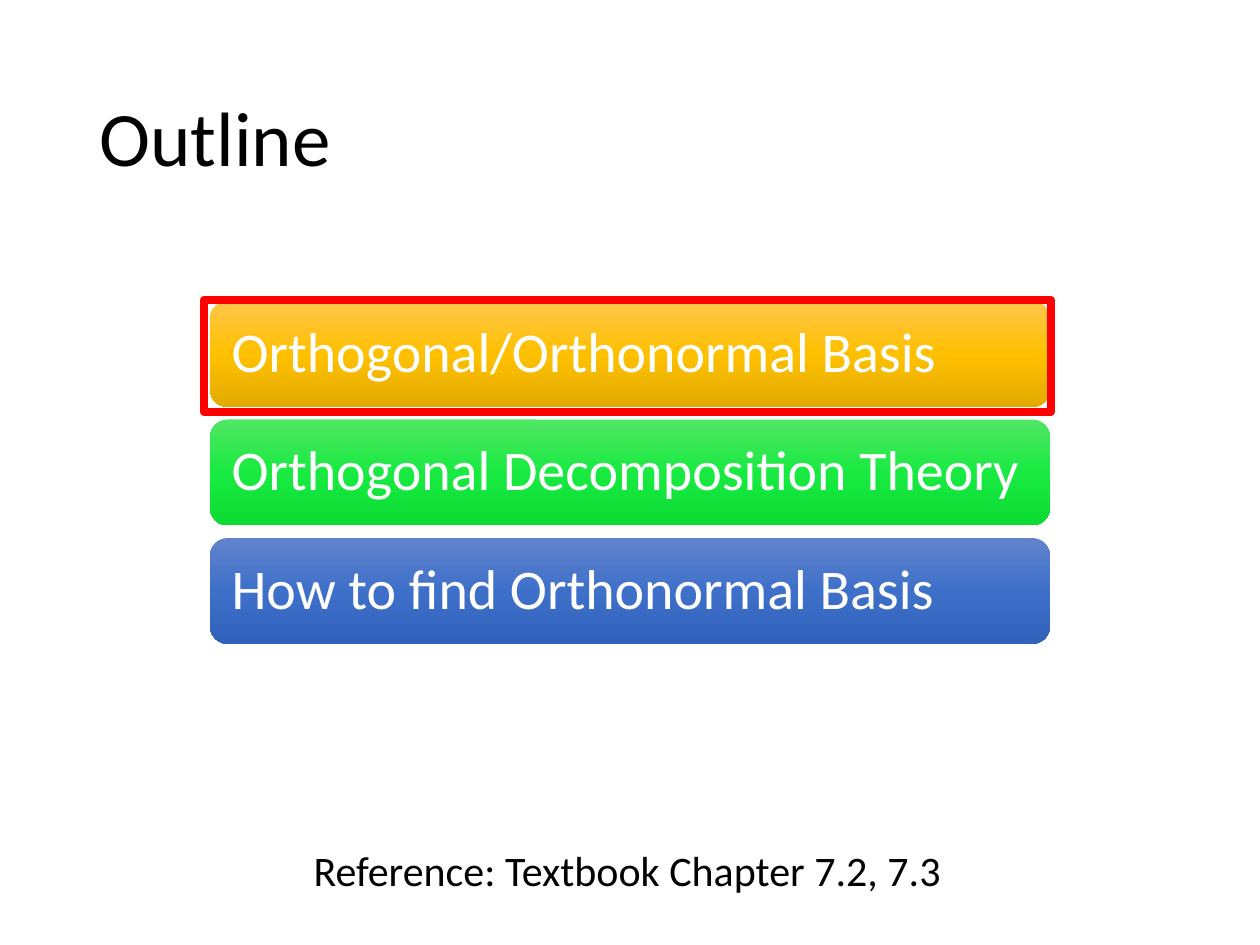
from copy import deepcopy

from pptx import Presentation
from pptx.dml.color import RGBColor
from pptx.enum.shapes import MSO_SHAPE
from pptx.enum.text import MSO_ANCHOR, PP_ALIGN
from pptx.oxml.ns import qn
from pptx.util import Inches, Pt

ROUNDED, RECTANGLE = MSO_SHAPE.ROUNDED_RECTANGLE, MSO_SHAPE.RECTANGLE
TOP, MIDDLE = MSO_ANCHOR.TOP, MSO_ANCHOR.MIDDLE
LEFT = PP_ALIGN.LEFT

TITLE = "Outline"
REFERENCE = "Reference: Textbook Chapter 7.2, 7.3"
TOPICS = [  # wording, gradient from top to bottom
    ("Orthogonal/Orthonormal Basis", ("FFC64B", "FFC000", "E3AB00")),
    ("Orthogonal Decomposition Theory", ("51E663", "19EA42", "0CDB34")),
    ("How to find Orthonormal Basis", ("6183CB", "3E70CA", "3062BB")),
]

THEME = {
    "font": "Calibri",
    "title": {"size": 44, "color": "000000"},
    "topic": {"size": 32, "color": "FFFFFF"},
    "reference": {"size": 24, "color": "000000"},
    "highlight": {"width": 4.5, "color": "FF0000"},
}

WIDTH, HEIGHT = 10, 7.5
BAR_WIDTH, BAR_HEIGHT, BAR_PITCH = WIDTH * 2 / 3, 0.84, 0.94
BAR_LEFT, BAR_TOP = (WIDTH - BAR_WIDTH) / 2, 2.39
BAR_INSET = 0.13


def inches(*lengths):
    return [Inches(length) for length in lengths]


def write(shape, text, style, anchor=TOP, wrap=True, spacing=1.0, inset=None):
    frame = shape.text_frame
    settings = {"word_wrap": wrap, "vertical_anchor": anchor}
    if inset is not None:
        for side in ("left", "right", "top", "bottom"):
            settings[f"margin_{side}"] = Inches(inset)
    for name, value in settings.items():
        setattr(frame, name, value)
    para = frame.paragraphs[0]
    para.alignment, para.line_spacing = LEFT, spacing
    span = para.add_run()
    span.text = text
    span.font.name = THEME["font"]
    span.font.size = Pt(style["size"])
    span.font.color.rgb = RGBColor.from_string(style["color"])


def fill_gradient(shape, colors):
    """Fill from top to bottom with three evenly spaced colours."""
    shape.fill.gradient()
    shape.fill.gradient_angle = 270
    first = shape._element.spPr.find(".//" + qn("a:gs"))
    first.addnext(deepcopy(first))
    stops = shape.fill.gradient_stops
    for index, (stop, color) in enumerate(zip(stops, colors)):
        stop.position = index / (len(colors) - 1)
        stop.color.rgb = RGBColor.from_string(color)


def add_bar(page, row, text, colors):
    top = BAR_TOP + row * BAR_PITCH
    bar = page.shapes.add_shape(ROUNDED, *inches(BAR_LEFT, top, BAR_WIDTH, BAR_HEIGHT))
    bar.shadow.inherit = False
    bar.line.fill.background()
    fill_gradient(bar, colors)
    write(bar, text, THEME["topic"], MIDDLE, spacing=0.9, inset=BAR_INSET)


def add_highlight(page):
    frame = page.shapes.add_shape(RECTANGLE, *inches(1.62, 2.38, 6.72, 0.89))
    frame.shadow.inherit = False
    frame.fill.background()
    frame.line.width = Pt(THEME["highlight"]["width"])
    frame.line.color.rgb = RGBColor.from_string(THEME["highlight"]["color"])


def main():
    deck = Presentation()
    deck.slide_width, deck.slide_height = inches(WIDTH, HEIGHT)
    page = deck.slides.add_slide(deck.slide_layouts[6])

    title = page.shapes.add_textbox(*inches(0.69, 0.4, 8.62, 1.45))
    write(title, TITLE, THEME["title"], MIDDLE, spacing=0.9)
    reference = page.shapes.add_textbox(*inches(2.39, 6.65, 5.23, 0.5))
    write(reference, REFERENCE, THEME["reference"], wrap=False)

    for row, (text, colors) in enumerate(TOPICS):
        add_bar(page, row, text, colors)
    add_highlight(page)
    deck.save("out.pptx")


if __name__ == "__main__":
    main()
